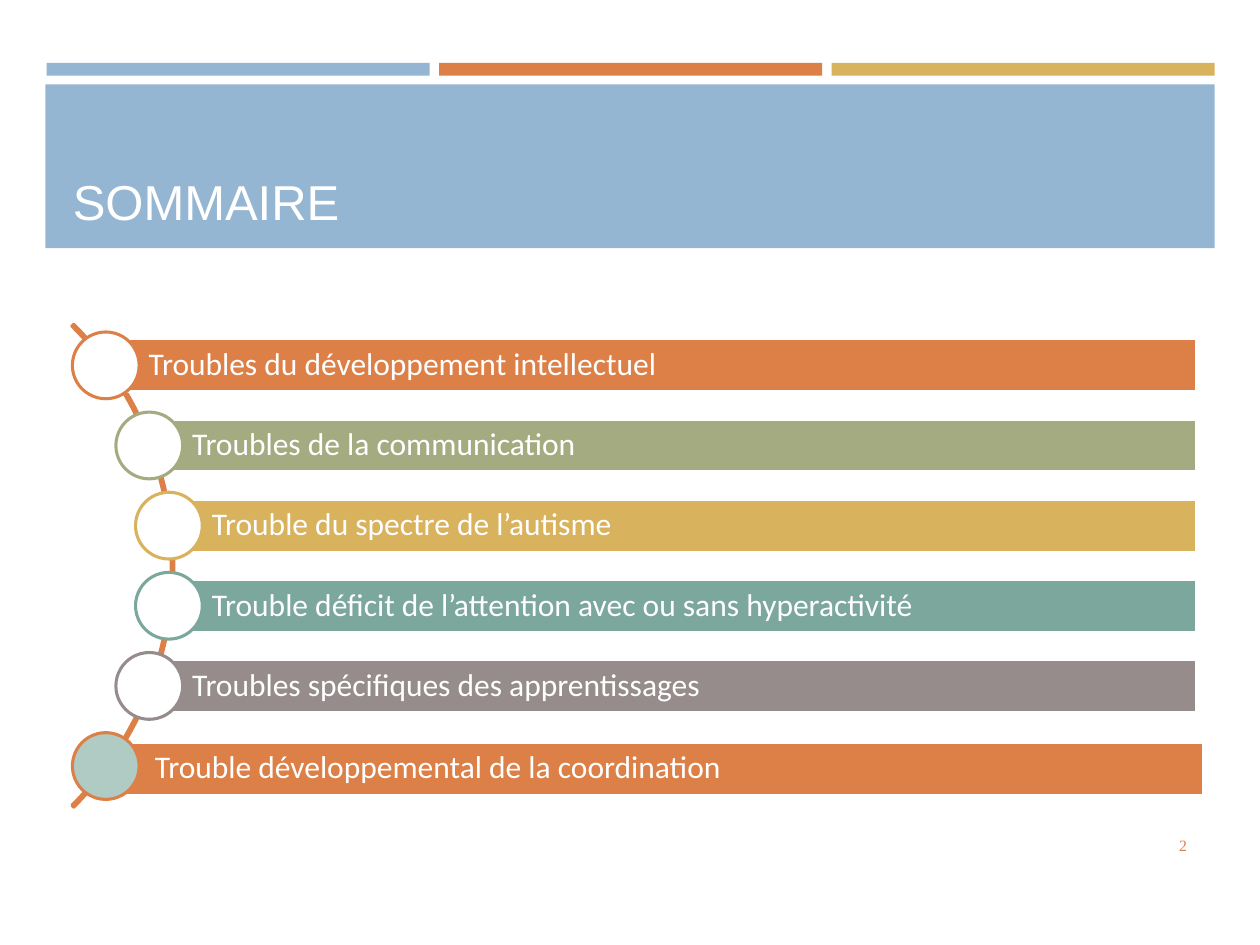
from math import sqrt

from pptx import Presentation
from pptx.dml.color import RGBColor
from pptx.enum import shapes, text
from pptx.util import Inches, Pt

WHITE = RGBColor(0xFF, 0xFF, 0xFF)
BLUE = RGBColor(0x94, 0xB6, 0xD2)
ORANGE = RGBColor(0xDD, 0x80, 0x47)
GOLD = RGBColor(0xD8, 0xB2, 0x5C)
GREEN = RGBColor(0xA5, 0xAB, 0x81)
TEAL = RGBColor(0x7B, 0xA7, 0x9D)
GREY = RGBColor(0x96, 0x8C, 0x8C)
MINT = RGBColor(0xB0, 0xCA, 0xC4)

KIND = shapes.MSO_SHAPE
COLS, ROWS = 100, 75
HUB_X, HUB_Y = -13.3, 44.9
ARC, RIM = 27.1, 26.9
PITCH, BAR, DOT = 6.36, 4.2, 5.3
EDGE = 95

TOPICS = [
    ("Troubles du développement intellectuel", ORANGE, WHITE, 0, 0),
    ("Troubles de la communication", GREEN, WHITE, 0, 0),
    ("Trouble du spectre de l’autisme", GOLD, WHITE, 0, 0),
    ("Trouble déficit de l’attention avec ou sans hyperactivité", TEAL, WHITE, 0, 0),
    ("Troubles spécifiques des apprentissages", GREY, WHITE, 0, 0),
    ("Trouble développemental de la coordination", ORANGE, MINT, 0.5, 0.2),
]


def write(shape, words, size, font="Calibri", color=WHITE, left=1,
          align=text.PP_ALIGN.LEFT, anchor=text.MSO_ANCHOR.MIDDLE, lead=None):
    """Put formatted text in a shape."""
    frame = shape.text_frame
    frame.word_wrap = True
    frame.vertical_anchor = anchor
    frame.margin_left = Inches(left / 10)
    para = frame.paragraphs[0]
    para.text = words
    para.alignment = align
    para.line_spacing = lead
    para.font.size = Pt(size)
    para.font.name = font
    para.font.color.rgb = color


class Deck:
    """Hold the slide, its grid and its line style."""

    def __init__(self):
        self.prs = Presentation()
        self.prs.slide_width, self.prs.slide_height = Inches(10), Inches(7.5)
        self.slide = self.prs.slides.add_slide(self.prs.slide_layouts[6])
        self.weight = Pt(1.75)

    def place(self, x, y, w, h):
        """Turn grid columns and rows into slide lengths."""
        wide, high = self.prs.slide_width / COLS, self.prs.slide_height / ROWS
        return [round(n) for n in (x * wide, y * high, w * wide, h * high)]

    def shape(self, kind, *box, fill=None, line=None):
        """Add a flat preset shape."""
        item = self.slide.shapes.add_shape(kind, *self.place(*box))
        item.shadow.inherit = False
        if fill is None:
            item.fill.background()
        else:
            item.fill.solid()
            item.fill.fore_color.rgb = fill
        if line is None:
            item.line.fill.background()
        else:
            item.line.color.rgb = line
            item.line.width = self.weight
        return item

    def label(self, words, *box, **style):
        """Add a text box."""
        write(self.slide.shapes.add_textbox(*self.place(*box)), words, **style)

    def arc(self):
        """Add the thin curve that carries the dots."""
        item = self.shape(KIND.BLOCK_ARC, HUB_X - ARC, HUB_Y - ARC,
                          2 * ARC, 2 * ARC, line=ORANGE)
        for i, value in enumerate((189, 27, 0.004)):
            item.adjustments[i] = value

    def topic(self, i, words, color, core, dx, dy):
        """Add one bar with its dot on the curve."""
        drop = (i - (len(TOPICS) - 1) / 2) * PITCH
        x, y = HUB_X + sqrt(RIM ** 2 - drop ** 2), HUB_Y + drop
        bar = self.shape(KIND.RECTANGLE, x + dx, y - BAR / 2 + dy, EDGE - x, BAR,
                         fill=color, line=WHITE)
        write(bar, words, 18, left=3.4, lead=0.9)
        self.shape(KIND.OVAL, x - DOT / 2, y - DOT / 2, DOT, DOT,
                   fill=core, line=color)


def main():
    """Build the summary slide."""
    deck = Deck()
    for i, color in enumerate((BLUE, ORANGE, GOLD)):
        deck.shape(KIND.RECTANGLE, 3.7 + i * 31.15, 5, 30.4, 1, fill=color)
    deck.shape(KIND.RECTANGLE, 3.6, 6.7, 92.8, 13, fill=BLUE)
    deck.label("SOMMAIRE", 4.8, 7.7, 90.5, 11.1, size=28, font="Arial",
               anchor=text.MSO_ANCHOR.BOTTOM)
    deck.label("2", 86.6, 65.1, 8.6, 4, size=9, font="Times New Roman",
               color=ORANGE, align=text.PP_ALIGN.RIGHT)
    deck.arc()
    for i, row in enumerate(TOPICS):
        deck.topic(i, *row)
    deck.prs.save("out.pptx")


if __name__ == "__main__":
    main()
